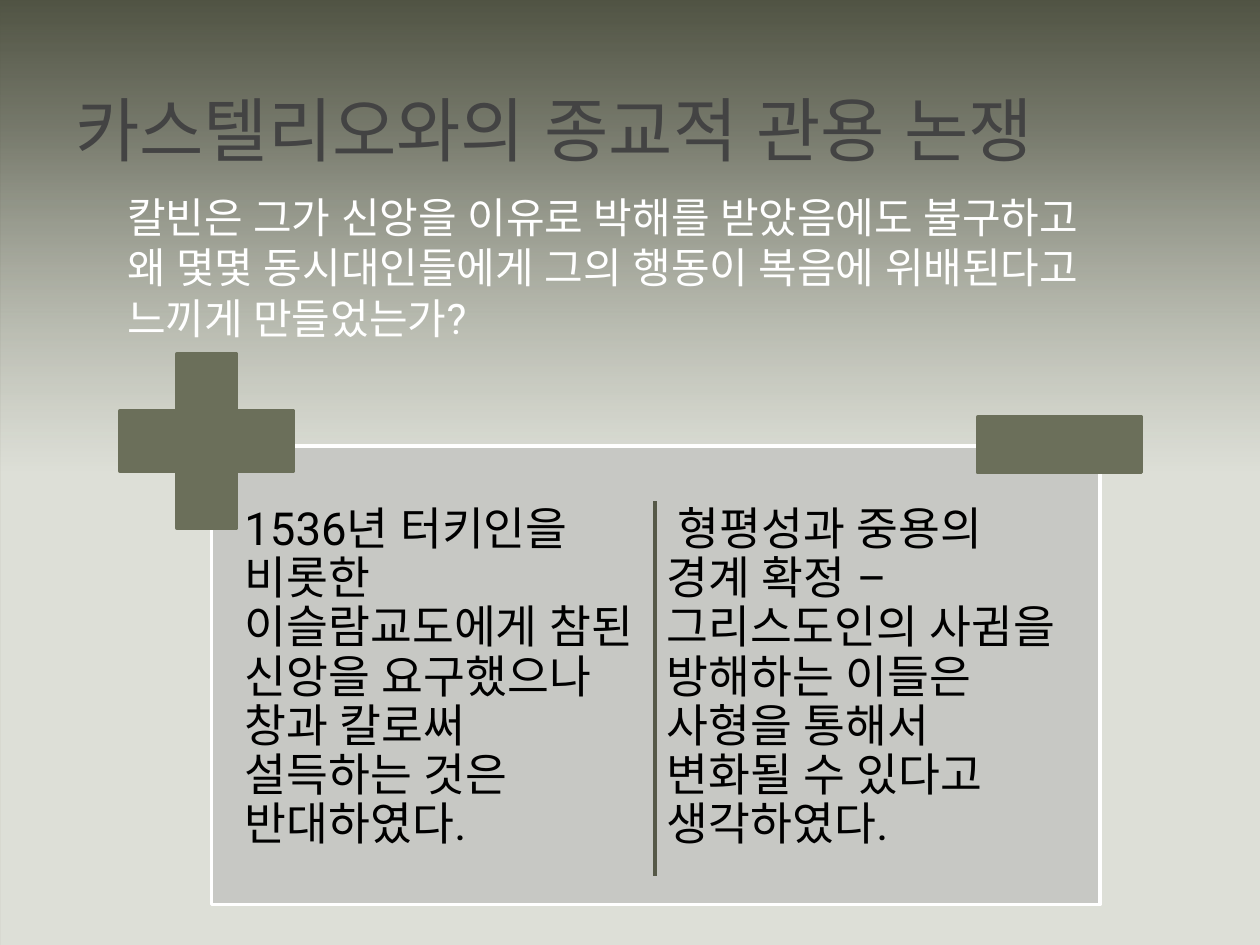
from lxml.etree import SubElement
from pptx import Presentation
from pptx.dml.color import RGBColor
from pptx.enum.shapes import MSO_CONNECTOR, MSO_SHAPE as Shape
from pptx.enum.text import MSO_ANCHOR as Anchor, PP_ALIGN as Align
from pptx.oxml import parse_xml
from pptx.oxml.ns import nsdecls, qn
from pptx.util import Inches, Pt

THEME = {
    "backdrop": "505343", "haze": "A8AC99", "mist": "DDDFD7",
    "panel": "C7C8C4", "sign": "6B6F5A", "divider": "565948",
    "title": "434343", "light": "FFFFFF", "dark": "000000",
    "heading_font": "Arial", "body_font": "Roboto",
    "title_size": 40, "question_size": 24, "argument_size": 26,
    "line": 2.08,
}

deck = Presentation()
deck.slide_width, deck.slide_height = Inches(10), Inches(7.5)
slide = deck.slides.add_slide(deck.slide_layouts[6])

# Grid of 100 columns and 75 rows
COL, ROW = deck.slide_width / 100, deck.slide_height / 75


def add_block(kind, box, fill, line=None):
    left, top, width, height = box
    block = slide.shapes.add_shape(kind, int(left * COL), int(top * ROW),
                                   int(width * COL), int(height * ROW))
    block.shadow.inherit = False
    block.fill.solid()
    block.fill.fore_color.rgb = RGBColor.from_string(THEME[fill])
    if line:
        block.line.color.rgb = RGBColor.from_string(THEME[line])
        block.line.width = Pt(THEME["line"])
    else:
        block.line.fill.background()
    return block


def add_text(box, words, font, size, color, inset=0.1, anchor=Anchor.TOP, spacing=1.0):
    left, top, width, height = box
    frame = slide.shapes.add_textbox(int(left * COL), int(top * ROW),
                                     int(width * COL), int(height * ROW)).text_frame
    frame.word_wrap = True
    frame.vertical_anchor = anchor
    frame.margin_left = frame.margin_right = Inches(inset)
    frame.margin_top = frame.margin_bottom = Inches(inset / 2 if inset == 0.1 else inset)
    frame.text = words
    paragraph = frame.paragraphs[0]
    paragraph.alignment = Align.LEFT
    paragraph.line_spacing = spacing
    run = paragraph.runs[0]
    run.font.name = THEME[font]
    run.font.size = Pt(THEME[size])
    run.font.color.rgb = RGBColor.from_string(THEME[color])
    for script in ("a:ea", "a:cs"):
        SubElement(run.font._element, qn(script), typeface=THEME[font])


# Background: two veils that thicken downwards over a dark backdrop
slide.background.fill.solid()
slide.background.fill.fore_color.rgb = RGBColor.from_string(THEME["backdrop"])
for top, tint, opacities in ((10.9, "haze", (0, 60, 80)), (0, "mist", (0, 100, 100))):
    veil = add_block(Shape.RECTANGLE, (0, top, 100, 75 - top), tint)
    stops = "".join(
        f'<a:gs pos="{step * 50000}"><a:srgbClr val="{THEME[tint]}">'
        f'<a:alpha val="{opacity * 1000}"/></a:srgbClr></a:gs>'
        for step, opacity in enumerate(opacities))
    gradient = parse_xml(f'<a:gradFill {nsdecls("a")} rotWithShape="1"><a:gsLst>{stops}</a:gsLst>'
                         '<a:lin ang="5400000" scaled="0"/></a:gradFill>')
    solid = veil._element.spPr.find(qn("a:solidFill"))
    solid.getparent().replace(solid, gradient)

# Title and question
add_text((5, 5.8, 90, 8.8), "카스텔리오와의 종교적 관용 논쟁",
         "heading_font", "title_size", "title", anchor=Anchor.MIDDLE)
add_text((9.1, 14.7, 79.1, 12.9),
         "칼빈은 그가 신앙을 이유로 박해를 받았음에도 불구하고 왜 몇몇 동시대인들에게 "
         "그의 행동이 복음에 위배된다고 느끼게 만들었는가?",
         "body_font", "question_size", "light")

# Panel with the two arguments
add_block(Shape.RECTANGLE, (16.8, 35.4, 70.5, 36.4), "panel", "light")
arguments = (
    "1536년 터키인을 비롯한 이슬람교도에게 참된 신앙을 요구했으나 창과 칼로써 "
    "설득하는 것은 반대하였다.",
    " 형평성과 중용의 경계 확정 – 그리스도인의 사귐을 방해하는 이들은 사형을 통해서 "
    "변화될 수 있다고 생각하였다.",
)
for side, argument in enumerate(arguments):
    add_text((18.9 + side * 33.5, 39.7, 32.7, 31.2), argument,
             "body_font", "argument_size", "dark", inset=0.05, spacing=0.9)

# Plus and minus signs
plus = add_block(Shape.CROSS, (9.5, 28.1, 13.8, 13.8), "sign", "sign")
plus.adjustments[0] = 0.328
add_block(Shape.RECTANGLE, (77.6, 33.1, 13, 4.4), "sign", "sign")

# Divider between the arguments
divider = slide.shapes.add_connector(MSO_CONNECTOR.STRAIGHT, int(52 * COL), int(39.8 * ROW),
                                     int(52 * COL), int(69.5 * ROW))
divider.line.color.rgb = RGBColor.from_string(THEME["divider"])
divider.line.width = Pt(THEME["line"])
SubElement(divider._element.spPr, qn("a:effectLst"))

deck.save("out.pptx")
